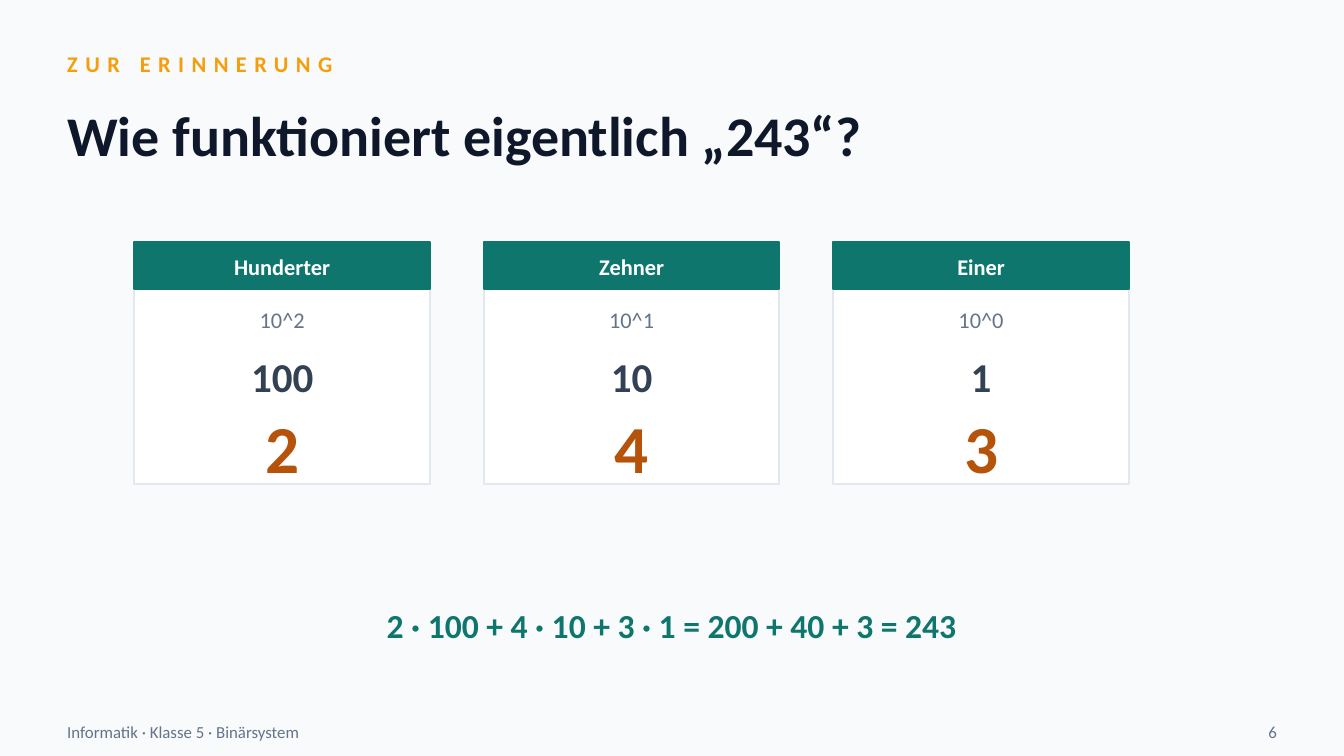
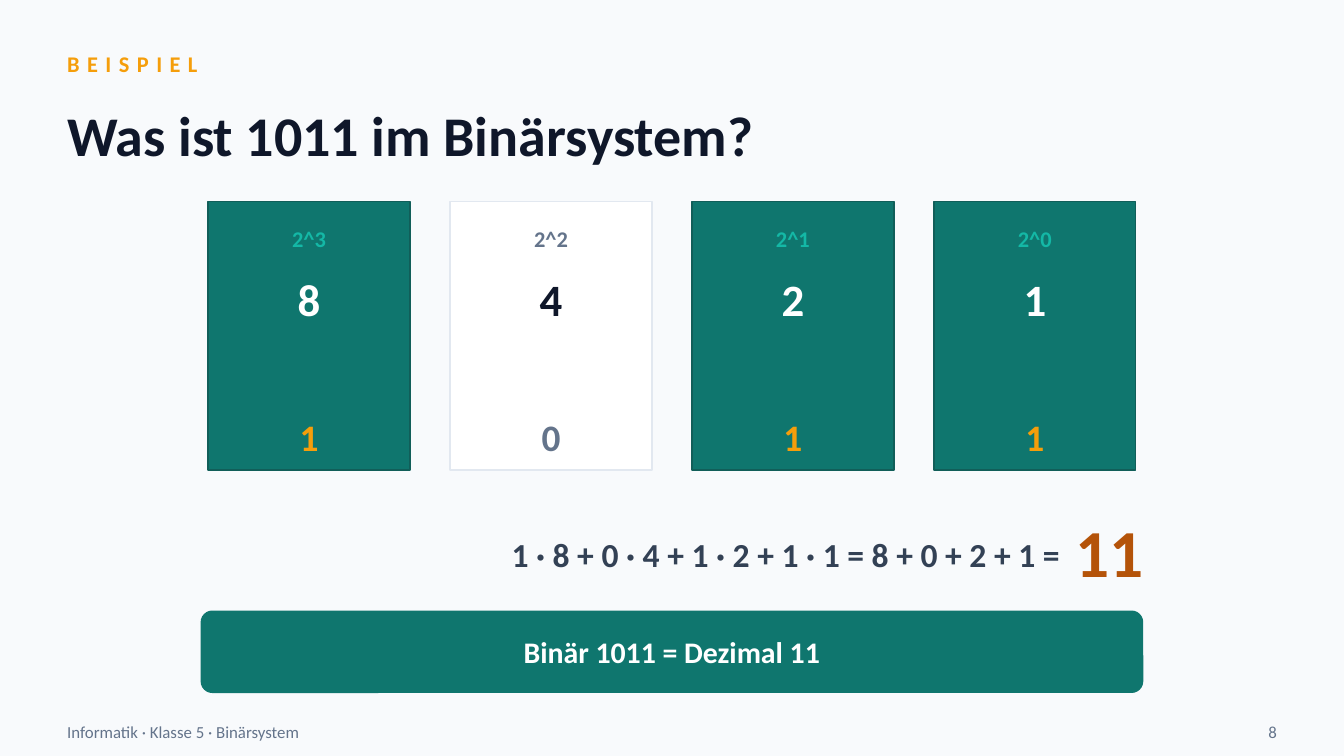
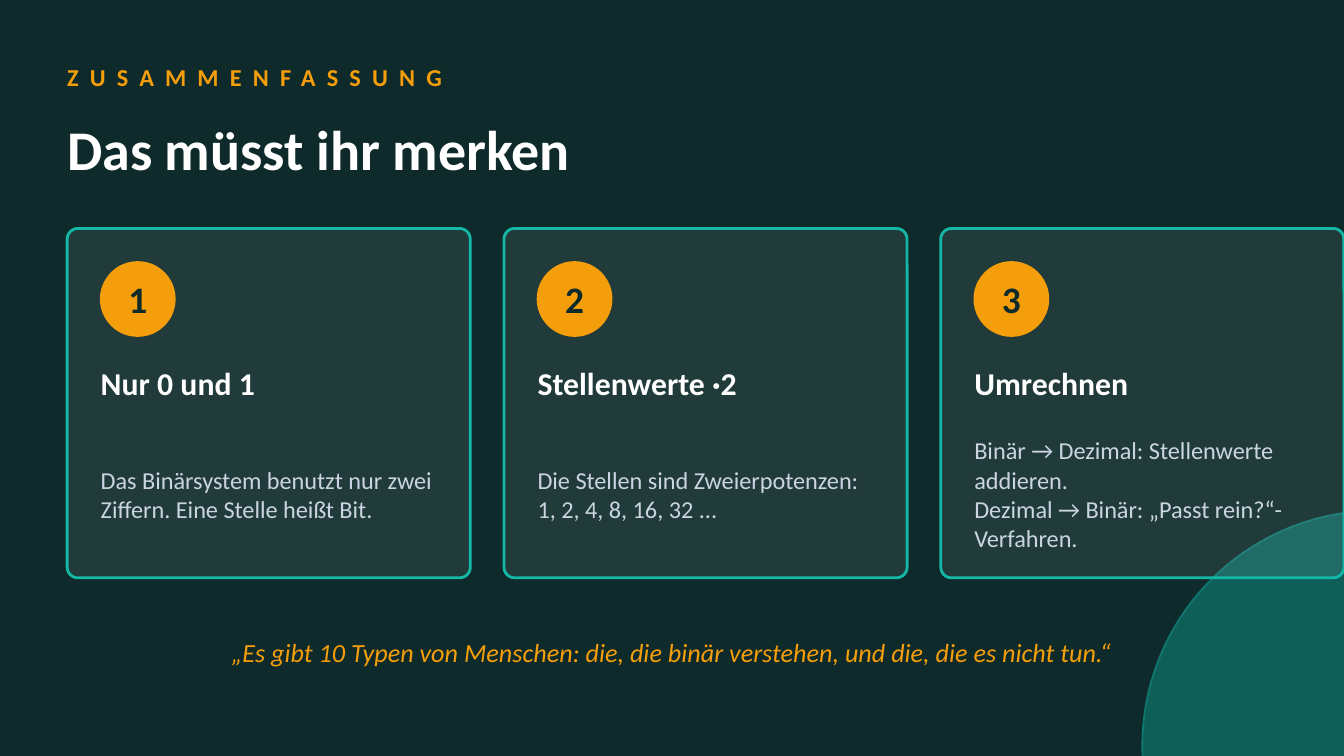
"""Build three slides on place values and binary numbers, laid out on a grid of 100 columns."""
import dataclasses
import typing

import lxml.etree
import pptx
import pptx.dml.color
import pptx.enum.shapes
import pptx.enum.text
import pptx.oxml.ns
import pptx.presentation
import pptx.shapes.autoshape
import pptx.slide
import pptx.util

SLIDE_WIDTH = pptx.util.Inches(10)
SLIDE_HEIGHT = SLIDE_WIDTH * 9 // 16
CELL = SLIDE_WIDTH // 100
FONT = "Calibri"
CORNER_RADIUS = 0.8

PAPER, NIGHT, WHITE, INK = "F8FAFC", "0F2A2A", "FFFFFF", "0F172A"
SLATE, GRAY, BORDER, MIST = "334155", "64748B", "E2E8F0", "CBD5E1"
TEAL, DARK_TEAL, BRIGHT_TEAL = "0F766E", "115E59", "14B8A6"
AMBER, RUST = "F59E0B", "B45309"

RECTANGLE = pptx.enum.shapes.MSO_SHAPE.RECTANGLE
ROUNDED = pptx.enum.shapes.MSO_SHAPE.ROUNDED_RECTANGLE
OVAL = pptx.enum.shapes.MSO_SHAPE.OVAL
LEFT = pptx.enum.text.PP_ALIGN.LEFT
CENTER = pptx.enum.text.PP_ALIGN.CENTER
RIGHT = pptx.enum.text.PP_ALIGN.RIGHT


class Box(typing.NamedTuple):
    column: float
    row: float
    columns: float
    rows: float

    def lengths(self) -> list[int]:
        return [round(value * CELL) for value in self]


@dataclasses.dataclass(frozen=True)
class Line:
    row: float
    rows: float
    size: float
    color: str
    bold: bool = True


@dataclasses.dataclass(frozen=True)
class BitStyle:
    fill: str
    border: str
    power: str
    value: str
    digit: str


@dataclasses.dataclass(frozen=True)
class Lesson:
    title: str
    paragraphs: tuple[str, ...]


PLACE_LINES = (
    Line(18.2, 3.2, 12, WHITE),
    Line(22.2, 3.2, 12, GRAY, bold=False),
    Line(25.5, 5, 22, SLATE),
    Line(30.5, 5.5, 36, RUST),
)
PLACES = (
    ("Hunderter", "10^2", "100", "2"),
    ("Zehner", "10^1", "10", "4"),
    ("Einer", "10^0", "1", "3"),
)
BIT_STYLES = {
    "1": BitStyle(TEAL, DARK_TEAL, BRIGHT_TEAL, WHITE, AMBER),
    "0": BitStyle(WHITE, BORDER, GRAY, INK, GRAY),
}
LESSONS = (
    Lesson("Nur 0 und 1", ("Das Binärsystem benutzt nur zwei Ziffern. Eine Stelle heißt Bit.",)),
    Lesson("Stellenwerte ·2", ("Die Stellen sind Zweierpotenzen: 1, 2, 4, 8, 16, 32 ...",)),
    Lesson("Umrechnen", ("Binär → Dezimal: Stellenwerte addieren.",
                         "Dezimal → Binär: „Passt rein?“-Verfahren.")),
)


def rgb(color: str) -> pptx.dml.color.RGBColor:
    return pptx.dml.color.RGBColor.from_string(color)


def add_text(slide: pptx.slide.Slide, box: Box, *paragraphs: str, size: float, color: str,
             bold: bool = False, italic: bool = False, align: typing.Any = LEFT,
             spacing: float = 0, right_inset: float = 0) -> None:
    frame = slide.shapes.add_textbox(*box.lengths()).text_frame
    frame.word_wrap = True
    frame.vertical_anchor = pptx.enum.text.MSO_ANCHOR.MIDDLE
    frame.margin_left = frame.margin_top = frame.margin_bottom = 0
    frame.margin_right = round(right_inset * CELL)
    for index, text in enumerate(paragraphs):
        paragraph = frame.add_paragraph() if index else frame.paragraphs[0]
        paragraph.alignment = align
        run = paragraph.add_run()
        run.text = text
        run.font.name = FONT
        run.font.size = pptx.util.Pt(size)
        run.font.bold = bold
        run.font.italic = italic
        run.font.color.rgb = rgb(color)
        if spacing:
            run.font._element.set("spc", str(round(spacing * 100)))


def add_panel(slide: pptx.slide.Slide, kind: typing.Any, box: Box, fill: str, border: str,
              border_width: float = 1, opacity: int = 100) -> None:
    shape = slide.shapes.add_shape(kind, *box.lengths())
    shape.shadow.inherit = False
    shape.fill.solid()
    shape.fill.fore_color.rgb = rgb(fill)
    shape.line.color.rgb = rgb(border)
    shape.line.width = pptx.util.Pt(border_width)
    if kind == ROUNDED:
        shape.adjustments[0] = CORNER_RADIUS / min(box.columns, box.rows)
    if opacity < 100:
        qualified = pptx.oxml.ns.qn
        color = shape.element.spPr.find(qualified("a:solidFill"))[0]
        lxml.etree.SubElement(color, qualified("a:alpha")).set("val", str(opacity * 1000))


def add_slide(presentation: pptx.presentation.Presentation, background: str) -> pptx.slide.Slide:
    slide = presentation.slides.add_slide(presentation.slide_layouts[6])
    slide.background.fill.solid()
    slide.background.fill.fore_color.rgb = rgb(background)
    return slide


def add_heading(slide: pptx.slide.Slide, kicker: str, title: str, kicker_line: Line,
                title_line: Line, spacing: float) -> None:
    for text, line, gap in ((kicker, kicker_line, spacing), (title, title_line, 0)):
        add_text(slide, Box(5, line.row, 90, line.rows), text, size=line.size,
                 color=line.color, bold=True, spacing=gap)


def add_light_slide(presentation: pptx.presentation.Presentation, kicker: str, title: str,
                    number: int) -> pptx.slide.Slide:
    slide = add_slide(presentation, PAPER)
    add_heading(slide, kicker, title, Line(3, 3.5, 12, AMBER), Line(6.2, 7.5, 30, INK), 4)
    add_text(slide, Box(5, 53.2, 60, 2.5), "Informatik · Klasse 5 · Binärsystem",
             size=9, color=GRAY)
    add_text(slide, Box(92, 53.2, 3, 2.5), str(number), size=9, color=GRAY, align=RIGHT)
    return slide


def add_stack(slide: pptx.slide.Slide, column: float, columns: float,
              lines: typing.Sequence[Line], texts: typing.Sequence[str]) -> None:
    for line, text in zip(lines, texts):
        add_text(slide, Box(column, line.row, columns, line.rows), text, size=line.size,
                 color=line.color, bold=line.bold, align=CENTER)


def build_decimal_slide(presentation: pptx.presentation.Presentation) -> None:
    slide = add_light_slide(presentation, "ZUR ERINNERUNG",
                            "Wie funktioniert eigentlich „243“?", 6)
    width = 22
    for index, texts in enumerate(PLACES):
        column = 10 + index * 26
        add_panel(slide, RECTANGLE, Box(column, 18, width, 18), WHITE, BORDER)
        add_panel(slide, RECTANGLE, Box(column, 18, width, 3.5), TEAL, TEAL)
        add_stack(slide, column, width, PLACE_LINES, texts)
    add_text(slide, Box(5, 44, 90, 5), "2 · 100 + 4 · 10 + 3 · 1 = 200 + 40 + 3 = 243",
             size=18, color=TEAL, bold=True, align=CENTER)


def build_binary_slide(presentation: pptx.presentation.Presentation) -> None:
    slide = add_light_slide(presentation, "BEISPIEL", "Was ist 1011 im Binärsystem?", 8)
    width, bits = 15, "1011"
    for index, bit in enumerate(bits):
        column = 15.5 + index * 18
        exponent = len(bits) - 1 - index
        style = BIT_STYLES[bit]
        lines = (Line(16, 3.5, 12, style.power), Line(19.5, 5.5, 24, style.value),
                 Line(30.5, 4, 20, style.digit))
        add_panel(slide, RECTANGLE, Box(column, 15, width, 20), style.fill, style.border)
        add_stack(slide, column, width, lines, (f"2^{exponent}", str(2 ** exponent), bit))
    add_text(slide, Box(5, 38.5, 75, 5.5),
             "1 · 8 + 0 · 4 + 1 · 2 + 1 · 1 = 8 + 0 + 2 + 1 =",
             size=18, color=SLATE, bold=True, align=RIGHT, right_inset=1.1)
    add_text(slide, Box(80, 37.5, 14, 7), "11", size=36, color=RUST, bold=True)
    add_panel(slide, ROUNDED, Box(15, 45.5, 70, 6), TEAL, TEAL)
    add_text(slide, Box(15, 46, 70, 5), "Binär 1011 = Dezimal 11",
             size=16, color=WHITE, bold=True, align=CENTER)


def build_summary_slide(presentation: pptx.presentation.Presentation) -> None:
    slide = add_slide(presentation, NIGHT)
    add_panel(slide, OVAL, Box(85, 38, 35, 35), TEAL, TEAL, opacity=70)
    add_heading(slide, "ZUSAMMENFASSUNG", "Das müsst ihr merken",
                Line(4, 3.5, 13, AMBER), Line(7.5, 7, 30, WHITE), 6)
    for index, lesson in enumerate(LESSONS):
        column = 5 + index * 32.5
        inner = column + 2.5
        badge = Box(inner, 19.5, 5.5, 5.5)
        add_panel(slide, ROUNDED, Box(column, 17, 30, 26), WHITE, BRIGHT_TEAL,
                  border_width=1.5, opacity=8)
        add_panel(slide, OVAL, badge, AMBER, AMBER)
        add_text(slide, badge, str(index + 1), size=20, color=NIGHT, bold=True, align=CENTER)
        add_text(slide, Box(inner, 26.5, 25, 4), lesson.title, size=17, color=WHITE, bold=True)
        add_text(slide, Box(inner, 31, 25, 11.5), *lesson.paragraphs, size=13, color=MIST)
    add_text(slide, Box(5, 46, 90, 5),
             "„Es gibt 10 Typen von Menschen: die, die binär verstehen, "
             "und die, die es nicht tun.“",
             size=14, color=AMBER, italic=True, align=CENTER)


def main() -> None:
    presentation = pptx.Presentation()
    presentation.slide_width = SLIDE_WIDTH
    presentation.slide_height = SLIDE_HEIGHT
    build_decimal_slide(presentation)
    build_binary_slide(presentation)
    build_summary_slide(presentation)
    presentation.save("out.pptx")


if __name__ == "__main__":
    main()
